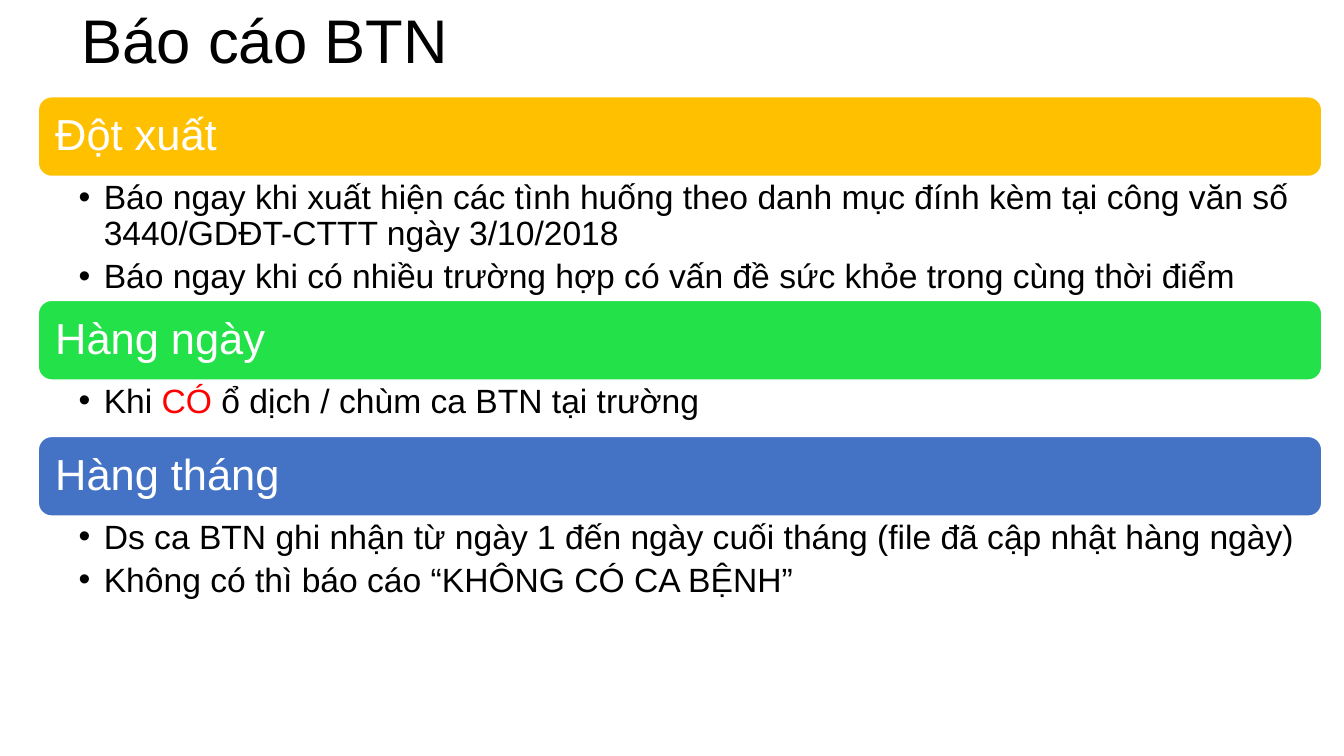
from dataclasses import dataclass

from lxml.etree import SubElement
from pptx import Presentation
from pptx.dml.color import RGBColor
from pptx.enum.shapes import MSO_SHAPE as Preset
from pptx.enum.text import MSO_ANCHOR as Anchor, PP_ALIGN as Align
from pptx.oxml.ns import qn
from pptx.shapes.autoshape import Shape
from pptx.slide import Slide
from pptx.util import Inches, Pt

BLACK = RGBColor(0x00, 0x00, 0x00)
WHITE = RGBColor(0xFF, 0xFF, 0xFF)
RED = RGBColor(0xFF, 0x00, 0x00)
AMBER = RGBColor(0xFF, 0xC0, 0x00)
GREEN = RGBColor(0x23, 0xE1, 0x48)
BLUE = RGBColor(0x44, 0x72, 0xC4)

FONT = "Arial"
LEFT, WIDTH = 0.38, 12.73
FIRST_TOP, BAR_HEIGHT = 0.96, 0.79


@dataclass(frozen=True)
class Run:
    text: str
    color: RGBColor = BLACK


@dataclass(frozen=True)
class Section:
    heading: str
    fill: RGBColor
    body_height: float
    bullets: list[list[Run]]


SECTIONS = [
    Section("Đột xuất", AMBER, 1.23, [
        [Run("Báo ngay khi xuất hiện các tình huống theo danh mục đính kèm "
             "tại công văn số 3440/GDĐT-CTTT ngày 3/10/2018")],
        [Run("Báo ngay khi có nhiều trường hợp có vấn đề sức khỏe "
             "trong cùng thời điểm")],
    ]),
    Section("Hàng ngày", GREEN, 0.56, [
        [Run("Khi "), Run("CÓ", RED), Run(" ổ dịch / chùm ca BTN tại trường")],
    ]),
    Section("Hàng tháng", BLUE, 0.86, [
        [Run("Ds ca BTN ghi nhận từ ngày 1 đến ngày cuối tháng "
             "(file đã cập nhật hàng ngày)")],
        [Run("Không có thì báo cáo “KHÔNG CÓ CA BỆNH”")],
    ]),
]


def write_text(
    shape: Shape,
    paragraphs: list[list[Run]],
    *,
    size: float,
    insets: tuple[float, float, float, float],
    anchor: Anchor = Anchor.MIDDLE,
    space_after: float = 0,
    bulleted: bool = False,
) -> None:
    frame = shape.text_frame
    frame.word_wrap = True
    frame.vertical_anchor = anchor
    frame.margin_left, frame.margin_top, frame.margin_right, frame.margin_bottom = (
        Inches(inset) for inset in insets
    )
    for index, runs in enumerate(paragraphs):
        paragraph = frame.add_paragraph() if index else frame.paragraphs[0]
        paragraph.alignment = Align.LEFT
        paragraph.line_spacing = 0.9
        paragraph.space_after = Pt(space_after)
        if bulleted:
            paragraph.level = 1
            properties = paragraph._p.get_or_add_pPr()
            properties.set("marL", str(Inches(0.25)))
            properties.set("indent", str(Inches(-0.25)))
            SubElement(properties, qn("a:buFont"), typeface=FONT)
            SubElement(properties, qn("a:buChar"), char="•")
        paragraph.font.size = Pt(size)
        for item in runs:
            run = paragraph.add_run()
            run.text = item.text
            run.font.name = FONT
            run.font.size = Pt(size)
            run.font.color.rgb = item.color


def add_text_box(slide: Slide, left: float, top: float, width: float, height: float) -> Shape:
    return slide.shapes.add_textbox(
        Inches(left), Inches(top), Inches(width), Inches(height)
    )


def add_section(slide: Slide, section: Section, top: float) -> float:
    bar = slide.shapes.add_shape(
        Preset.ROUNDED_RECTANGLE,
        Inches(LEFT), Inches(top), Inches(WIDTH), Inches(BAR_HEIGHT),
    )
    bar.shadow.inherit = False
    bar.fill.solid()
    bar.fill.fore_color.rgb = section.fill
    bar.line.color.rgb = WHITE
    bar.line.width = Pt(1)
    write_text(bar, [[Run(section.heading, WHITE)]], size=31, insets=(0.13,) * 4)

    body_top = top + BAR_HEIGHT
    body = add_text_box(slide, LEFT, body_top, WIDTH, section.body_height)
    write_text(
        body, section.bullets, size=24, insets=(0.4, 0.04, 0.24, 0.04),
        anchor=Anchor.TOP, space_after=4.8, bulleted=True,
    )
    return body_top + section.body_height


def main() -> None:
    presentation = Presentation()
    presentation.slide_width = Inches(13.33)
    presentation.slide_height = Inches(7.5)
    slide = presentation.slides.add_slide(presentation.slide_layouts[6])

    title = add_text_box(slide, 0.71, 0, 12, 0.86)
    write_text(title, [[Run("Báo cáo BTN")]], size=44, insets=(0.1, 0.05, 0.1, 0.05))

    top = FIRST_TOP
    for section in SECTIONS:
        top = add_section(slide, section, top)

    presentation.save("out.pptx")


if __name__ == "__main__":
    main()
